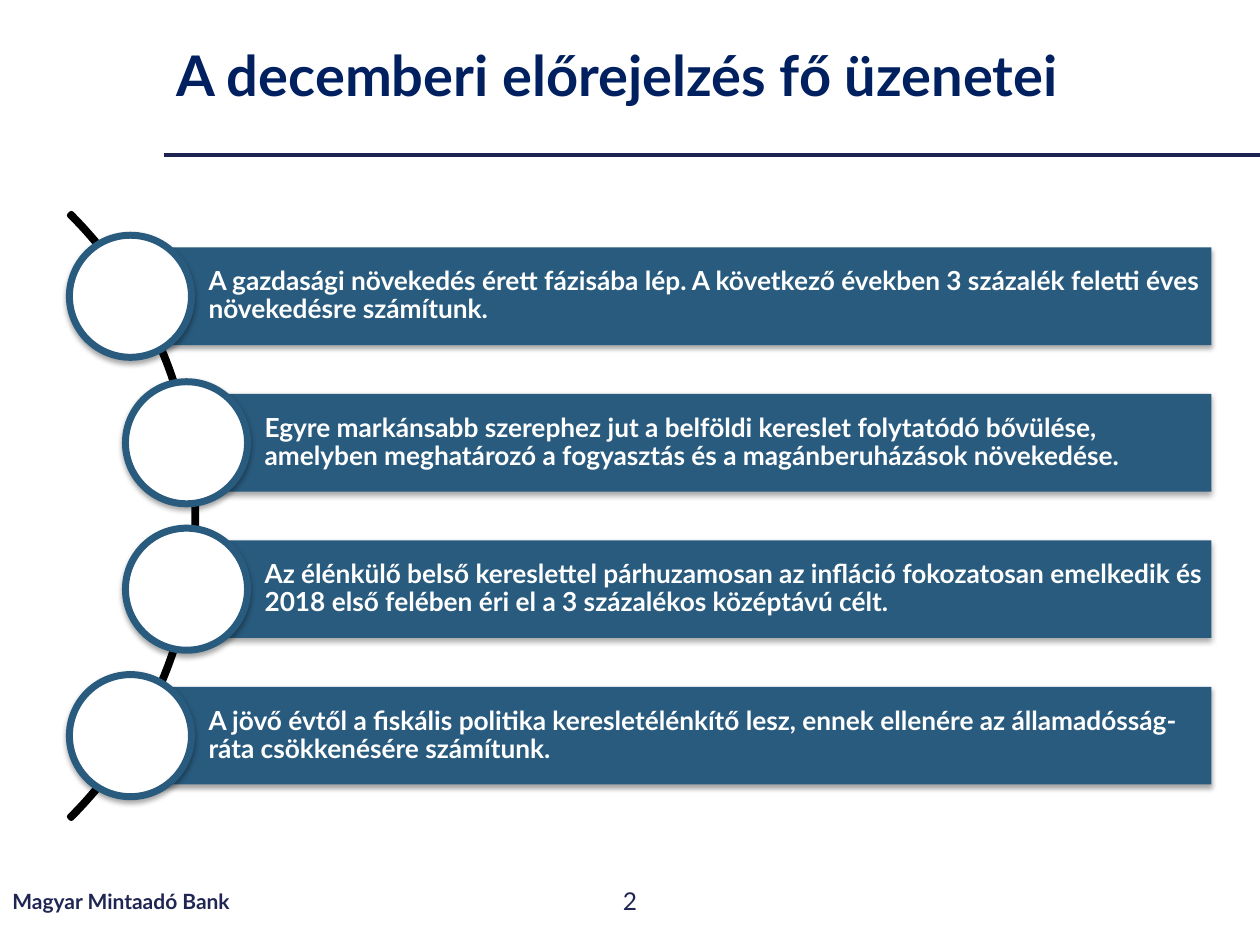
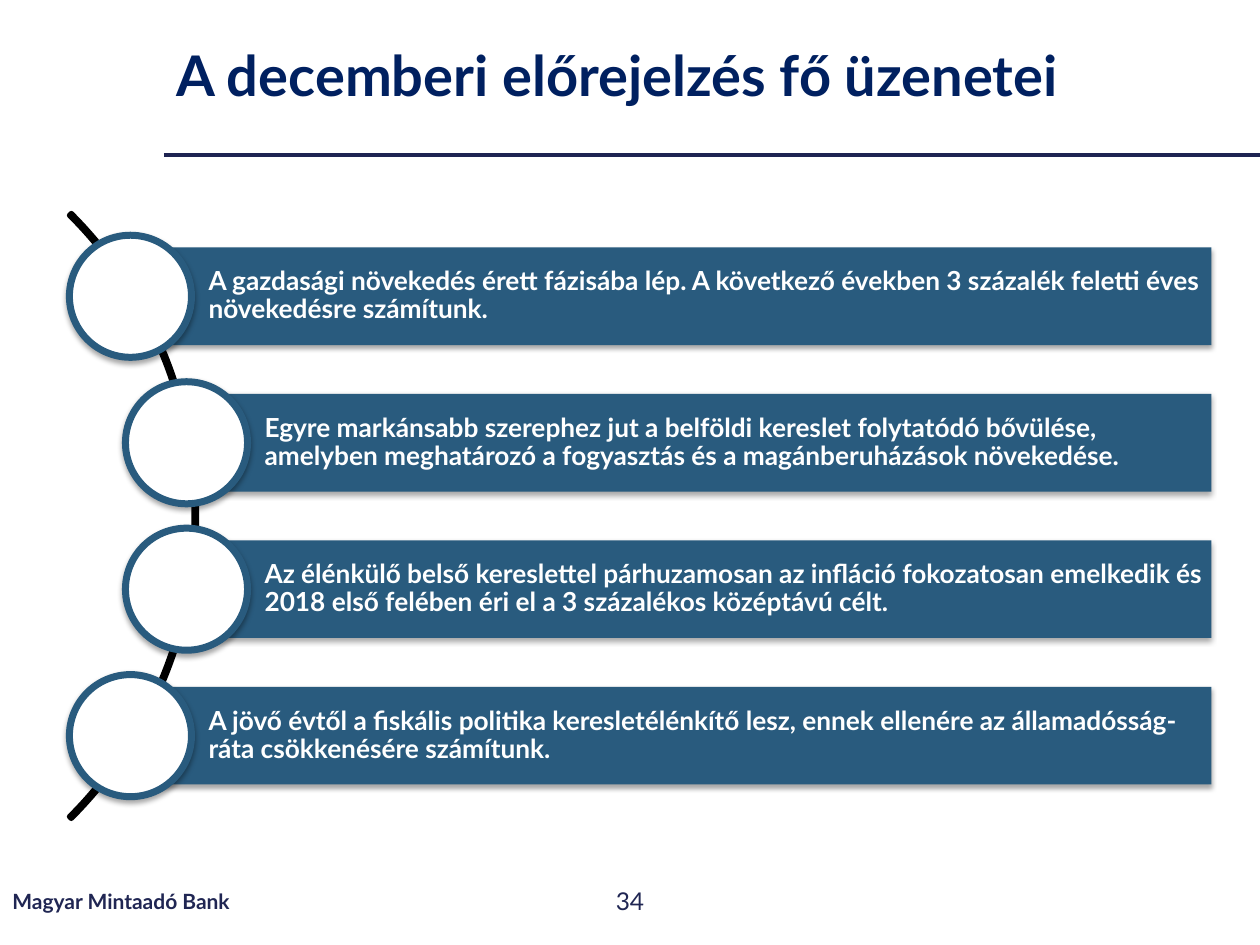
from typing import NamedTuple

from lxml.etree import SubElement
from pptx import Presentation
from pptx.dml.color import RGBColor
from pptx.enum.shapes import MSO_CONNECTOR, MSO_SHAPE
from pptx.enum.text import MSO_ANCHOR, PP_ALIGN
from pptx.oxml.ns import qn
from pptx.shapes.autoshape import Shape
from pptx.slide import Slide
from pptx.text.text import TextFrame
from pptx.util import Inches, Length, Pt

# The slide is a grid of square cells, a tenth of an inch each.
COLUMNS, ROWS = 100, 75

FONT = "Lato"
WHITE, BLACK = "FFFFFF", "000000"
TITLE_NAVY, RULE_NAVY, FOOTER_NAVY = "002060", "1E2452", "202653"
BAR_BLUE = "295B7E"

TITLE = "A decemberi előrejelzés fő üzenetei"
BANK = "Magyar Mintaadó Bank"
PAGE_NUMBERS = ("2", "34")

# Title and footer
MARGIN_LEFT = 13
RULE_ROW = 12.3
FOOTER_TOP, FOOTER_HEIGHT = 69.5, 4

# Message list
BAR_HEIGHT = 7.75
BAR_PITCH = 1.5 * BAR_HEIGHT
BAR_RIGHT = 96.15
CIRCLE_SIZE = 1.25 * BAR_HEIGHT
OUTER_COLUMN, INNER_COLUMN = 10.35, 14.8
LIST_MIDDLE = 40.95
ARC_SIZE, ARC_RIGHT = 67.9, 15.6
ARC_START, ARC_END, ARC_THICKNESS = 189, 27, 0.003


class Box(NamedTuple):
    left: float
    top: float
    width: float
    height: float


class TextStyle(NamedTuple):
    size: float
    color: str
    bold: bool = True
    align: PP_ALIGN = PP_ALIGN.LEFT
    line_spacing: float = 1.0


class Message(NamedTuple):
    text: str
    column: float


TITLE_STYLE = TextStyle(32, TITLE_NAVY, line_spacing=0.9)
BANK_STYLE = TextStyle(12, FOOTER_NAVY)
PAGE_STYLE = TextStyle(14, FOOTER_NAVY, bold=False, align=PP_ALIGN.CENTER)
MESSAGE_STYLE = TextStyle(15, WHITE, line_spacing=0.9)

MESSAGES = (
    Message("A gazdasági növekedés érett fázisába lép. A következő években "
            "3 százalék feletti éves növekedésre számítunk.", OUTER_COLUMN),
    Message("Egyre markánsabb szerephez jut a belföldi kereslet folytatódó bővülése, "
            "amelyben meghatározó a fogyasztás és a magánberuházások növekedése.",
            INNER_COLUMN),
    Message("Az élénkülő belső kereslettel párhuzamosan az infláció fokozatosan "
            "emelkedik és 2018 első felében éri el a 3 százalékos középtávú célt.",
            INNER_COLUMN),
    Message("A jövő évtől a fiskális politika keresletélénkítő lesz, ennek ellenére "
            "az államadósság-ráta csökkenésére számítunk.", OUTER_COLUMN),
)


def cells(count: float) -> Length:
    return Inches(count / 10)


def rgb(color: str) -> RGBColor:
    return RGBColor.from_string(color)


def write(frame: TextFrame, text: str, style: TextStyle) -> None:
    frame.word_wrap = True
    frame.vertical_anchor = MSO_ANCHOR.MIDDLE
    paragraph = frame.paragraphs[0]
    paragraph.text = text
    paragraph.alignment = style.align
    paragraph.line_spacing = style.line_spacing
    font = paragraph.font
    font.name, font.size, font.bold = FONT, Pt(style.size), style.bold
    font.color.rgb = rgb(style.color)


def add_label(slide: Slide, box: Box, text: str, style: TextStyle) -> None:
    label = slide.shapes.add_textbox(*map(cells, box))
    write(label.text_frame, text, style)


def add_figure(slide: Slide, preset: MSO_SHAPE, box: Box, fill: str = "",
               line: str = "", line_width: float = 0) -> Shape:
    """Add a preset shape; an empty colour leaves out the fill or the line."""
    figure = slide.shapes.add_shape(preset, *map(cells, box))
    figure.shadow.inherit = False
    if fill:
        figure.fill.solid()
        figure.fill.fore_color.rgb = rgb(fill)
    else:
        figure.fill.background()
    if line:
        figure.line.color.rgb = rgb(line)
        figure.line.width = Pt(line_width)
    else:
        figure.line.fill.background()
    return figure


def cast_shadow(figure: Shape) -> None:
    """Add a soft shadow falling straight down."""
    effects = figure._element.spPr.find(qn("a:effectLst"))
    shadow = SubElement(effects, qn("a:outerShdw"), blurRad=str(Pt(3.1)),
                        dist=str(Pt(1.8)), dir="5400000", rotWithShape="0")
    tint = SubElement(shadow, qn("a:srgbClr"), val=BLACK)
    SubElement(tint, qn("a:alpha"), val="35000")


def add_frame(slide: Slide, page: str) -> None:
    """Add the title, its rule and the footer."""
    rule = slide.shapes.add_connector(MSO_CONNECTOR.STRAIGHT, cells(MARGIN_LEFT),
                                      cells(RULE_ROW), cells(COLUMNS), cells(RULE_ROW))
    rule.line.color.rgb = rgb(RULE_NAVY)
    rule.line.width = Pt(2.25)
    SubElement(rule._element.spPr, qn("a:effectLst"))

    add_label(slide, Box(MARGIN_LEFT, 0, COLUMNS - MARGIN_LEFT, 12.4), TITLE, TITLE_STYLE)
    add_label(slide, Box(0, FOOTER_TOP, 33.8, FOOTER_HEIGHT), BANK, BANK_STYLE)
    add_label(slide, Box(38.75, FOOTER_TOP, 22.5, FOOTER_HEIGHT), page, PAGE_STYLE)


def add_arc(slide: Slide) -> None:
    box = Box(ARC_RIGHT - ARC_SIZE, LIST_MIDDLE - ARC_SIZE / 2, ARC_SIZE, ARC_SIZE)
    arc = add_figure(slide, MSO_SHAPE.BLOCK_ARC, box, line=BLACK, line_width=3)
    for index, value in enumerate((ARC_START, ARC_END, ARC_THICKNESS)):
        arc.adjustments[index] = value


def add_message(slide: Slide, message: Message, middle: float) -> None:
    """Add a bar, centred on the given row, with a circle over its left end."""
    bar = add_figure(slide, MSO_SHAPE.RECTANGLE,
                     Box(message.column, middle - BAR_HEIGHT / 2,
                         BAR_RIGHT - message.column, BAR_HEIGHT), fill=BAR_BLUE)
    cast_shadow(bar)
    frame = bar.text_frame
    frame.margin_left = cells(6.2)
    frame.margin_top = frame.margin_right = frame.margin_bottom = cells(0.4)
    write(frame, message.text, MESSAGE_STYLE)

    radius = CIRCLE_SIZE / 2
    circle = add_figure(slide, MSO_SHAPE.OVAL,
                        Box(message.column - radius, middle - radius,
                            CIRCLE_SIZE, CIRCLE_SIZE),
                        fill=WHITE, line=BAR_BLUE, line_width=4)
    cast_shadow(circle)


def add_message_list(slide: Slide) -> None:
    add_arc(slide)
    first_middle = LIST_MIDDLE - BAR_PITCH * (len(MESSAGES) - 1) / 2
    for index, message in enumerate(MESSAGES):
        add_message(slide, message, first_middle + index * BAR_PITCH)


def main() -> None:
    deck = Presentation()
    deck.slide_width, deck.slide_height = cells(COLUMNS), cells(ROWS)
    blank_layout = deck.slide_layouts[6]
    for page in PAGE_NUMBERS:
        slide = deck.slides.add_slide(blank_layout)
        add_frame(slide, page)
        add_message_list(slide)
    deck.save("out.pptx")


if __name__ == "__main__":
    main()
